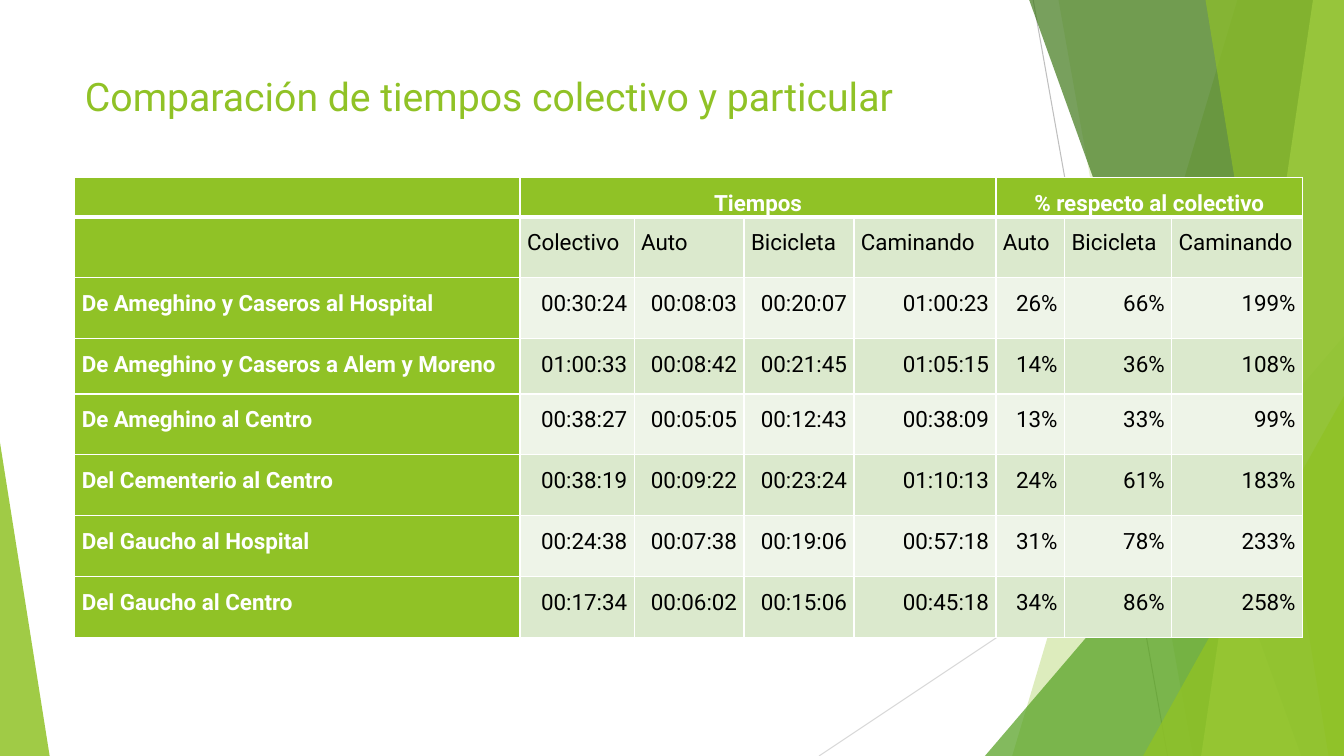
import dataclasses

import lxml.etree
import pptx
import pptx.dml.color
import pptx.enum.shapes
import pptx.enum.text
import pptx.oxml.ns
import pptx.util

Pt = pptx.util.Pt
ALIGN = pptx.enum.text.PP_ALIGN
WIDTH, HEIGHT = 960, 540
TOP = -0.5


@dataclasses.dataclass(frozen=True)
class Theme:
    font: str = "Roboto"
    title_size: int = 28
    table_size: int = 16
    green: str = "90C226"
    leaf: str = "54A021"
    forest: str = "3F7819"
    lime: str = "C0E474"
    band_dark: str = "DBE9CD"
    band_light: str = "EEF4E8"
    white: str = "FFFFFF"
    black: str = "000000"
    line_dark: str = "BFBFBF"
    line_light: str = "D9D9D9"


THEME = Theme()

LINES = [
    (738, 0, 834, HEIGHT, THEME.line_dark),
    (WIDTH, 290, 585, HEIGHT, THEME.line_light),
]
# Upper left x, lower left x, colour, opacity in percent
BACK_BANDS = [(884, 723, THEME.green, 30), (756, 852, THEME.green, 20)]
FRONT_BANDS = [
    (735, 929.5, THEME.forest, 70),
    (938, 858, THEME.lime, 70),
    (861, 949, THEME.green, 65),
]

COLUMNS = [318, 81.5, 78.5, 78.5, 101.5, 49, 76.5, 93.5]
ROWS = [20, 43.5, 43.5, 39.5, 43.5, 43.5, 43.5, 43.5]
MERGES = [(1, 4), (5, 7)]
TIMES = [
    ["", "Tiempos", "", "", "", "% respecto al colectivo", "", ""],
    ["", "Colectivo", "Auto", "Bicicleta", "Caminando", "Auto", "Bicicleta", "Caminando"],
    ["De Ameghino y Caseros al Hospital", "00:30:24", "00:08:03", "00:20:07", "01:00:23", "26%", "66%", "199%"],
    ["De Ameghino y Caseros a Alem y Moreno", "01:00:33", "00:08:42", "00:21:45", "01:05:15", "14%", "36%", "108%"],
    ["De Ameghino al Centro", "00:38:27", "00:05:05", "00:12:43", "00:38:09", "13%", "33%", "99%"],
    ["Del Cementerio al Centro", "00:38:19", "00:09:22", "00:23:24", "01:10:13", "24%", "61%", "183%"],
    ["Del Gaucho al Hospital", "00:24:38", "00:07:38", "00:19:06", "00:57:18", "31%", "78%", "233%"],
    ["Del Gaucho al Centro", "00:17:34", "00:06:02", "00:15:06", "00:45:18", "34%", "86%", "258%"],
]


def rgb(colour):
    return pptx.dml.color.RGBColor.from_string(colour)


def add_xml(parent, tag, **attributes):
    return lxml.etree.SubElement(parent, pptx.oxml.ns.qn(tag), attributes)


class SlideBuilder:
    def __init__(self, slide, theme):
        self.slide = slide
        self.theme = theme

    def line(self, x1, y1, x2, y2, colour):
        connector = self.slide.shapes.add_connector(
            pptx.enum.shapes.MSO_CONNECTOR.STRAIGHT, Pt(x1), Pt(y1), Pt(x2), Pt(y2))
        connector.line.color.rgb = rgb(colour)
        connector.line.width = Pt(0.75)
        add_xml(connector.element.spPr, "a:effectLst")

    def paint(self, shape, colour, opacity):
        """Give a shape a see-through fill without line or shadow."""
        shape.shadow.inherit = False
        shape.line.fill.background()
        shape.fill.solid()
        shape.fill.fore_color.rgb = rgb(colour)
        for element in shape.element.spPr.iter(pptx.oxml.ns.qn("a:srgbClr")):
            add_xml(element, "a:alpha", val=str(opacity * 1000))

    def band(self, upper_x, lower_x, colour, opacity):
        """Draw a slanted band that reaches the right edge of the slide."""
        builder = self.slide.shapes.build_freeform(Pt(upper_x), Pt(TOP))
        corners = [(WIDTH, TOP), (WIDTH, HEIGHT), (lower_x, HEIGHT)]
        builder.add_line_segments([(Pt(x), Pt(y)) for x, y in corners], close=True)
        self.paint(builder.convert_to_shape(), colour, opacity)

    def triangle(self, left, top, width, apex, colour, opacity):
        """Draw a triangle that stands on the bottom edge of the slide."""
        shape = self.slide.shapes.add_shape(
            pptx.enum.shapes.MSO_SHAPE.ISOSCELES_TRIANGLE,
            Pt(left), Pt(top), Pt(width), Pt(HEIGHT - top))
        shape.adjustments[0] = apex
        self.paint(shape, colour, opacity)

    def run(self, paragraph, text, size, colour, bold=False):
        run = paragraph.add_run()
        run.text = text
        run.font.name = self.theme.font
        run.font.size = Pt(size)
        run.font.bold = bold
        run.font.color.rgb = rgb(colour)

    def title(self, text, left, top, width, height):
        title = self.slide.shapes.title
        title.left, title.top, title.width, title.height = map(Pt, (left, top, width, height))
        title.text_frame.word_wrap = True
        title.text_frame.vertical_anchor = pptx.enum.text.MSO_ANCHOR.TOP
        paragraph = title.text_frame.paragraphs[0]
        paragraph.alignment = ALIGN.LEFT
        self.run(paragraph, text, self.theme.title_size, self.theme.green)
        self.slide.shapes.element.append(title.element)  # in front of the backdrop

    def borders(self, cell, row):
        properties = cell._tc.get_or_add_tcPr()
        widths = {"L": 1, "R": 1, "T": 3 if row == 1 else 1, "B": 3 if row == 0 else 1}
        for side, width in widths.items():
            line = add_xml(properties, f"a:ln{side}", w=str(Pt(width)))
            add_xml(add_xml(line, "a:solidFill"), "a:srgbClr", val=self.theme.white)

    def cell(self, cell, text, row, column):
        theme = self.theme
        heading = row == 0 or column == 0
        cell.margin_left = cell.margin_right = Pt(5)
        cell.margin_top = cell.margin_bottom = 0
        self.borders(cell, row)
        cell.fill.solid()
        band = theme.band_dark if row % 2 else theme.band_light
        cell.fill.fore_color.rgb = rgb(theme.green if heading else band)
        paragraph = cell.text_frame.paragraphs[0]
        if not text:
            add_xml(paragraph._p, "a:endParaRPr", sz=str(theme.table_size * 100))
            return
        paragraph.line_spacing = 1.5
        if row == 0:
            paragraph.alignment = ALIGN.CENTER
        else:
            paragraph.alignment = ALIGN.RIGHT if row > 1 and column > 0 else ALIGN.LEFT
        self.run(paragraph, text, theme.table_size, theme.white if heading else theme.black, heading)

    def table(self, left, top, columns, rows, texts, merges):
        table = self.slide.shapes.add_table(
            len(rows), len(columns), Pt(left), Pt(top), Pt(sum(columns)), Pt(sum(rows))).table
        for column, width in zip(table.columns, columns):
            column.width = Pt(width)
        for row, height in zip(table.rows, rows):
            row.height = Pt(height)
        for first, last in merges:
            table.cell(0, first).merge(table.cell(0, last))
        for row, row_texts in enumerate(texts):
            for column, text in enumerate(row_texts):
                self.cell(table.cell(row, column), text, row, column)


def main():
    presentation = pptx.Presentation()
    presentation.slide_width = Pt(WIDTH)
    presentation.slide_height = Pt(HEIGHT)
    slide = presentation.slides.add_slide(presentation.slide_layouts.get_by_name("Title Only"))
    builder = SlideBuilder(slide, THEME)

    for line in LINES:
        builder.line(*line)
    for band in BACK_BANDS:
        builder.band(*band)
    builder.triangle(703.5, 240, 256.5, 1, THEME.leaf, 72)
    for band in FRONT_BANDS:
        builder.band(*band)
    builder.triangle(816.5, 283, 143.5, 1, THEME.green, 80)
    builder.triangle(0, 316, 35.5, 0, THEME.green, 85)

    builder.title("Comparación de tiempos colectivo y particular", 53.5, 48, 677, 78.5)
    builder.table(53.5, 127, COLUMNS, ROWS, TIMES, MERGES)
    presentation.save("out.pptx")


if __name__ == "__main__":
    main()
